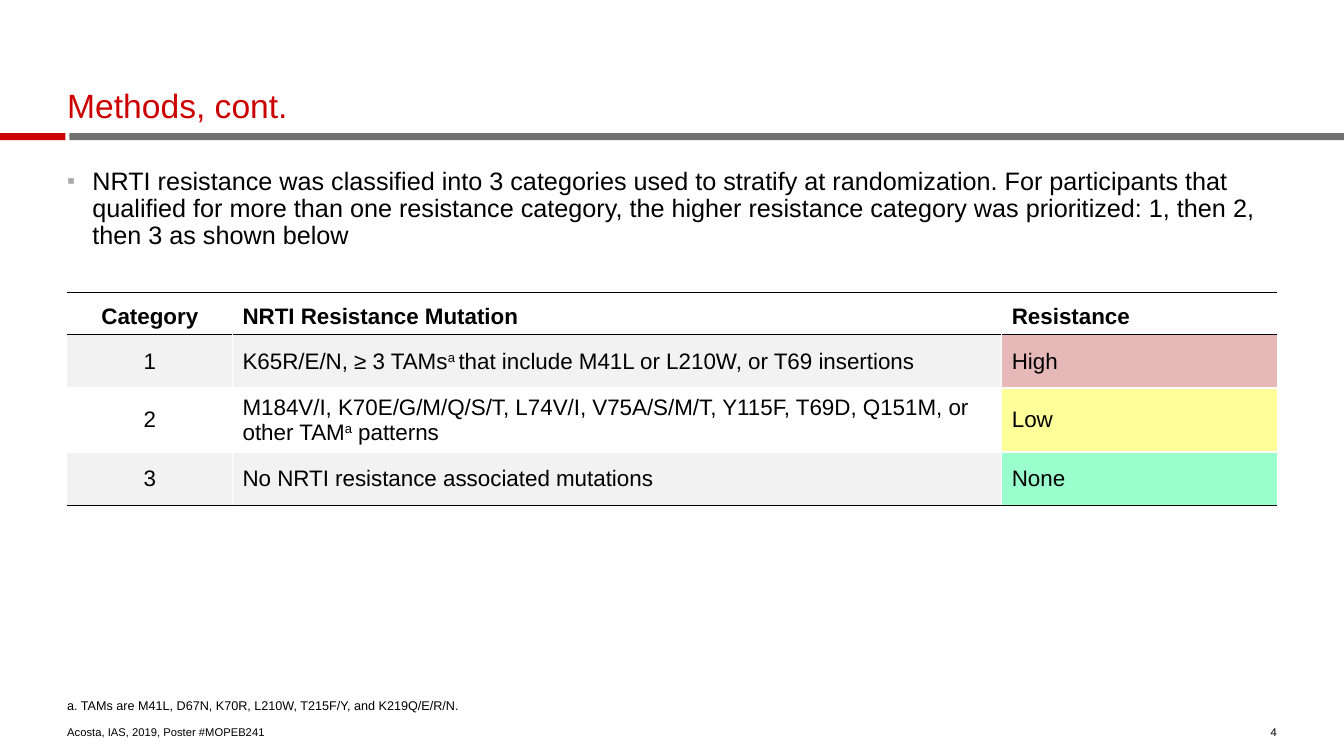
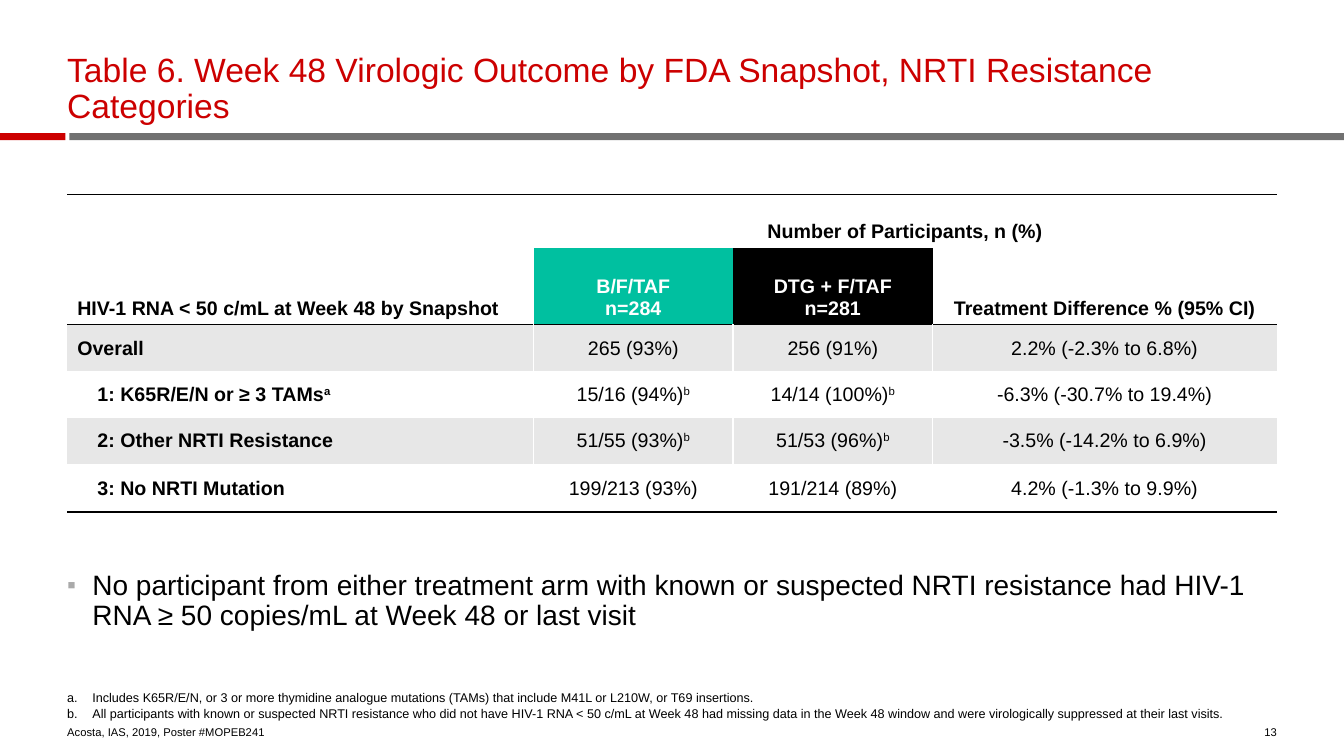
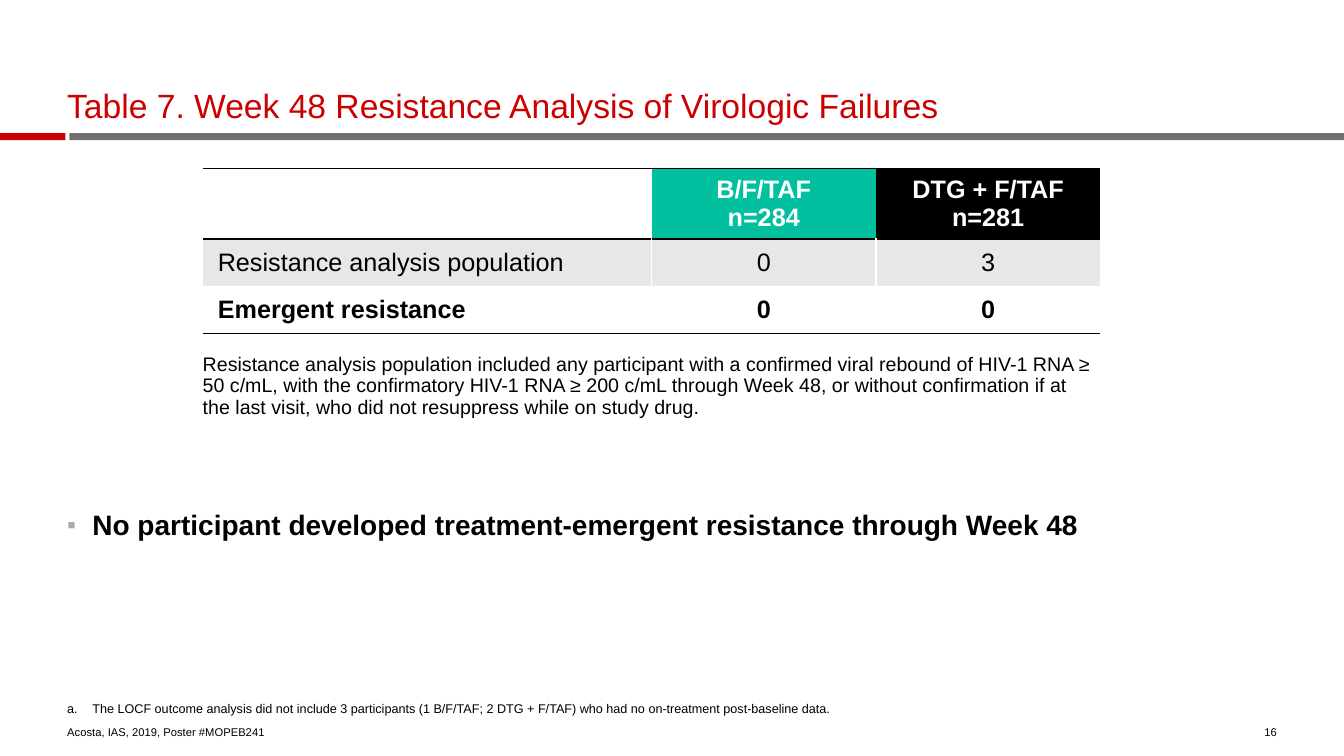
from dataclasses import dataclass

from lxml.etree import SubElement
from pptx import Presentation
from pptx.dml.color import RGBColor
from pptx.enum.shapes import MSO_SHAPE
from pptx.enum.text import MSO_ANCHOR, PP_ALIGN
from pptx.oxml.ns import qn
from pptx.util import Inches, Pt

# Theme
RED = RGBColor(0xCC, 0x00, 0x00)
GRAY = RGBColor(0x71, 0x71, 0x71)
BULLET_GRAY = RGBColor(0xAA, 0xAA, 0xAA)
BLACK = RGBColor(0x00, 0x00, 0x00)
WHITE = RGBColor(0xFF, 0xFF, 0xFF)
PALE_BAND = RGBColor(0xF2, 0xF2, 0xF2)
BAND = RGBColor(0xE7, 0xE7, 0xE7)
TEAL = RGBColor(0x00, 0xC0, 0xA0)
PINK = RGBColor(0xE6, 0xB9, 0xB8)
YELLOW = RGBColor(0xFF, 0xFF, 0x99)
MINT = RGBColor(0x99, 0xFF, 0xCC)

FONT = "Arial"
ALIGN = {"l": PP_ALIGN.LEFT, "c": PP_ALIGN.CENTER, "r": PP_ALIGN.RIGHT}
SOURCE = "Acosta, IAS, 2019, Poster #MOPEB241"
SQUARE, LETTERS = "▪", "a."

# Positions and sizes are percentages of the slide's width and height
SLIDE_W, SLIDE_H = Inches(13.33), Inches(7.5)
LEFT, FULL = 5, 90
BODY_TOP = 22.27
TABLE_LEFT, TABLE_WIDTH = 15.08, 66.8


@dataclass(frozen=True)
class Box:
    x: float
    y: float
    w: float
    h: float

    def emu(self) -> tuple[int, int, int, int]:
        return across(self.x), down(self.y), across(self.w), down(self.h)


@dataclass(frozen=True)
class Cell:
    text: str = ""
    bold: bool = False
    fill: RGBColor | None = None
    color: RGBColor = BLACK
    indent: float = 0.1


@dataclass(frozen=True)
class Grid:
    x: float
    y: float
    cols: list[float]
    heights: list[float]
    aligns: str
    rows: list[list[Cell]]
    size: int
    band: RGBColor
    header_rows: int = 1
    header_anchor: MSO_ANCHOR = MSO_ANCHOR.BOTTOM
    merges: tuple[tuple[int, int, int, int], ...] = ()


def across(share: float) -> int:
    return round(SLIDE_W * share / 100)


def down(share: float) -> int:
    return round(SLIDE_H * share / 100)


# Text
def add_bullet(p, bullet: str) -> None:
    pPr = p._p.get_or_add_pPr()
    pPr.set("marL", str(Inches(0.25)))
    pPr.set("indent", str(Inches(-0.25)))
    if bullet == LETTERS:
        SubElement(pPr, qn("a:buAutoNum"), type="alphaLcPeriod")
        return
    color = SubElement(pPr, qn("a:buClr"))
    SubElement(color, qn("a:srgbClr"), val=str(BULLET_GRAY))
    SubElement(pPr, qn("a:buSzPct"), val="90000")
    SubElement(pPr, qn("a:buFont"), typeface=FONT)
    SubElement(pPr, qn("a:buChar"), char=bullet)


def write(tf, text: str, *, size: int, color: RGBColor = BLACK,
          bold: bool = False, align: str = "l", spacing: float = 1,
          before: int = 0, bullet: str = "") -> None:
    """Each line is a paragraph; text between carets is superscript."""
    for i, line in enumerate(text.split("\n")):
        p = tf.add_paragraph() if i else tf.paragraphs[0]
        p.alignment = ALIGN[align]
        p.line_spacing = spacing
        p.space_before = Pt(before)
        if bullet:
            add_bullet(p, bullet)
        for j, piece in enumerate(line.split("^")):
            if not piece:
                continue
            r = p.add_run()
            r.text = piece
            r.font.name, r.font.size = FONT, Pt(size)
            r.font.bold, r.font.color.rgb = bold, color
            if j % 2:
                r._r.get_or_add_rPr().set("baseline", "30000")


def add_text(s, box: Box, text: str, anchor: MSO_ANCHOR = MSO_ANCHOR.TOP,
             **style) -> None:
    tf = s.shapes.add_textbox(*box.emu()).text_frame
    tf.word_wrap = True
    tf.vertical_anchor = anchor
    tf.margin_left = tf.margin_right = tf.margin_top = tf.margin_bottom = 0
    write(tf, text, **style)


def add_body(s, y: float, h: float, text: str, **style) -> None:
    add_text(s, Box(LEFT, y, FULL, h), text, spacing=0.9, before=12,
             bullet=SQUARE, **style)


# Table
def add_edge(cell, side: str, color: RGBColor | None) -> None:
    ln = SubElement(cell._tc.get_or_add_tcPr(), qn(f"a:ln{side}"),
                    w=str(Pt(1)))
    if color is None:
        SubElement(ln, qn("a:noFill"))
    else:
        fill = SubElement(ln, qn("a:solidFill"))
        SubElement(fill, qn("a:srgbClr"), val=str(color))


def add_grid(s, g: Grid) -> None:
    n_rows, n_cols = len(g.heights), len(g.cols)
    box = Box(g.x, g.y, sum(g.cols), sum(g.heights))
    table = s.shapes.add_table(n_rows, n_cols, *box.emu()).table
    table.first_row = table.horz_banding = False
    for col, share in zip(table.columns, g.cols):
        col.width = across(share)
    for row, share in zip(table.rows, g.heights):
        row.height = down(share)
    for top, left, bottom, right in g.merges:
        table.cell(top, left).merge(table.cell(bottom, right))

    def rule(i: int) -> RGBColor | None:
        if i in (0, g.header_rows, n_rows):
            return BLACK
        return WHITE if i > g.header_rows else None

    for i, row in enumerate(g.rows):
        header = i < g.header_rows
        banded = not header and (i - g.header_rows) % 2 == 0
        for j, item in enumerate(row):
            cell = table.cell(i, j)
            span = cell.span_height if cell.is_merge_origin else 1
            inner = None if header else WHITE
            add_edge(cell, "L", inner if j else None)
            add_edge(cell, "R", inner if j < n_cols - 1 else None)
            add_edge(cell, "T", rule(i))
            add_edge(cell, "B", rule(i + span))
            cell.fill.solid()
            cell.fill.fore_color.rgb = item.fill or (g.band if banded else WHITE)
            cell.vertical_anchor = g.header_anchor if header else MSO_ANCHOR.MIDDLE
            cell.margin_left = Inches(item.indent)
            write(cell.text_frame, item.text, size=g.size, color=item.color,
                  bold=header or item.bold, align=g.aligns[j])


# Frame shared by all slides
def add_band(s, box: Box, color: RGBColor) -> None:
    sp = s.shapes.add_shape(MSO_SHAPE.RECTANGLE, *box.emu())
    sp.shadow.inherit = False
    sp.fill.solid()
    sp.fill.fore_color.rgb = color
    sp.line.fill.background()


def add_slide(prs, title: str, number: int):
    s = prs.slides.add_slide(prs.slide_layouts[6])
    add_band(s, Box(5.17, 17.6, 94.83, 0.93), GRAY)
    add_band(s, Box(0, 17.6, 4.87, 0.93), RED)
    add_text(s, Box(LEFT, 6.8, FULL, 9.87), title, MSO_ANCHOR.BOTTOM,
             size=24, color=RED, spacing=0.9)
    add_text(s, Box(LEFT, 95.33, 33.3, 2.4), SOURCE, MSO_ANCHOR.BOTTOM, size=8)
    add_text(s, Box(92.3, 95.33, 2.7, 2.4), str(number), MSO_ANCHOR.BOTTOM,
             size=8, align="r")
    return s


ARMS = [Cell("B/F/TAF\nn=284", fill=TEAL, color=WHITE),
        Cell("DTG + F/TAF\nn=281", fill=BLACK, color=WHITE)]


def add_methods(prs) -> None:
    s = add_slide(prs, "Methods, cont.", 4)
    add_body(s, BODY_TOP, 12.4,
             "NRTI resistance was classified into 3 categories used to stratify "
             "at randomization. For participants that qualified for more than "
             "one resistance category, the higher resistance category was "
             "prioritized: 1, then 2, then 3 as shown below", size=18)
    categories = [
        ("K65R/E/N, ≥ 3 TAMs^a ^that include M41L or L210W, or T69 insertions",
         "High", PINK),
        ("M184V/I, K70E/G/M/Q/S/T, L74V/I, V75A/S/M/T, Y115F, T69D, Q151M, "
         "or other TAM^a^ patterns", "Low", YELLOW),
        ("No NRTI resistance associated mutations", "None", MINT),
    ]
    header = [Cell("Category"), Cell("NRTI Resistance Mutation"),
              Cell("Resistance")]
    body = [[Cell(str(n)), Cell(mutation), Cell(level, fill=fill)]
            for n, (mutation, level, fill) in enumerate(categories, 1)]
    add_grid(s, Grid(LEFT, 38.67, [12.3, 57.24, 20.46],
                     [5.6, 7.07, 7.87, 7.07], "cll", [header, *body],
                     size=16, band=PALE_BAND))
    add_text(s, Box(LEFT, 92.53, 51, 1.87),
             "a. TAMs are M41L, D67N, K70R, L210W, T215F/Y, and K219Q/E/R/N.",
             size=9, spacing=0.9)


def add_outcome(prs) -> None:
    s = add_slide(prs, "Table 6. Week 48 Virologic Outcome by FDA Snapshot, "
                       "NRTI Resistance Categories", 13)
    outcomes = [
        ("Overall", "265 (93%)", "256 (91%)", "2.2% (-2.3% to 6.8%)"),
        ("1: K65R/E/N or ≥ 3 TAMs^a^", "15/16 (94%)^b^", "14/14 (100%)^b^",
         "-6.3% (-30.7% to 19.4%)"),
        ("2: Other NRTI Resistance", "51/55 (93%)^b^", "51/53 (96%)^b^",
         "-3.5% (-14.2% to 6.9%)"),
        ("3: No NRTI Mutation", "199/213 (93%)", "191/214 (89%)",
         "4.2% (-1.3% to 9.9%)"),
    ]
    header = [
        [Cell("HIV-1 RNA < 50 c/mL at Week 48 by Snapshot"),
         Cell("Number of Participants, n (%)"), Cell(), Cell()],
        [Cell(), *ARMS, Cell("Treatment Difference % (95% CI)")],
    ]
    body = [[Cell(label, bold=True, indent=0.3 if i else 0.1),
             *(Cell(v) for v in values)]
            for i, (label, *values) in enumerate(outcomes)]
    add_grid(s, Grid(LEFT, 25.73, [34.7, 14.85, 14.85, 25.6],
                     [7.07, 10.13, 6.27, 6, 6.27, 6.27], "lccc",
                     header + body, size=14, band=BAND, header_rows=2,
                     merges=((0, 0, 1, 0), (0, 1, 0, 3))))
    add_body(s, 75.6, 14.4,
             "No participant from either treatment arm with known or suspected "
             "NRTI resistance had HIV-1 RNA ≥ 50 copies/mL at Week 48 or last "
             "visit", size=20)
    add_text(s, Box(LEFT, 91.33, 88.87, 4),
             "Includes K65R/E/N, or 3 or more thymidine analogue mutations "
             "(TAMs) that include M41L or L210W, or T69 insertions.\n"
             "All participants with known or suspected NRTI resistance who did "
             "not have HIV-1 RNA < 50 c/mL at Week 48 had missing data in the "
             "Week 48 window and were virologically suppressed at their last "
             "visits.", MSO_ANCHOR.BOTTOM, size=9, bullet=LETTERS)


def add_resistance(prs) -> None:
    s = add_slide(prs, "Table 7. Week 48 Resistance Analysis of Virologic "
                       "Failures", 16)
    body = [
        [Cell("Resistance analysis population", indent=0.15),
         Cell("0"), Cell("3")],
        [Cell("Emergent resistance", bold=True, indent=0.15),
         Cell("0", bold=True), Cell("0", bold=True)],
    ]
    half = TABLE_WIDTH / 2
    add_grid(s, Grid(TABLE_LEFT, BODY_TOP, [half, half / 2, half / 2],
                     [8.67, 6.27, 6.27], "lcc", [[Cell(), *ARMS], *body],
                     size=18, band=BAND, header_anchor=MSO_ANCHOR.MIDDLE))
    add_text(s, Box(TABLE_LEFT, 46.93, TABLE_WIDTH, 10),
             "Resistance analysis population included any participant with a "
             "confirmed viral rebound of HIV-1 RNA ≥ 50 c/mL, with the "
             "confirmatory HIV-1 RNA ≥ 200 c/mL through Week 48, or without "
             "confirmation if at the last visit, who did not resuppress while "
             "on study drug.", size=14, spacing=0.9)
    add_body(s, 67.6, 22.4,
             "No participant developed treatment-emergent resistance through "
             "Week 48", size=20, bold=True)
    add_text(s, Box(LEFT, 92.93, 77.85, 1.87),
             "The LOCF outcome analysis did not include 3 participants "
             "(1 B/F/TAF; 2 DTG + F/TAF) who had no on-treatment post-baseline "
             "data.", MSO_ANCHOR.BOTTOM, size=9, spacing=0.9, bullet=LETTERS)


def main() -> None:
    prs = Presentation()
    prs.slide_width, prs.slide_height = SLIDE_W, SLIDE_H
    add_methods(prs)
    add_outcome(prs)
    add_resistance(prs)
    prs.save("out.pptx")


if __name__ == "__main__":
    main()
